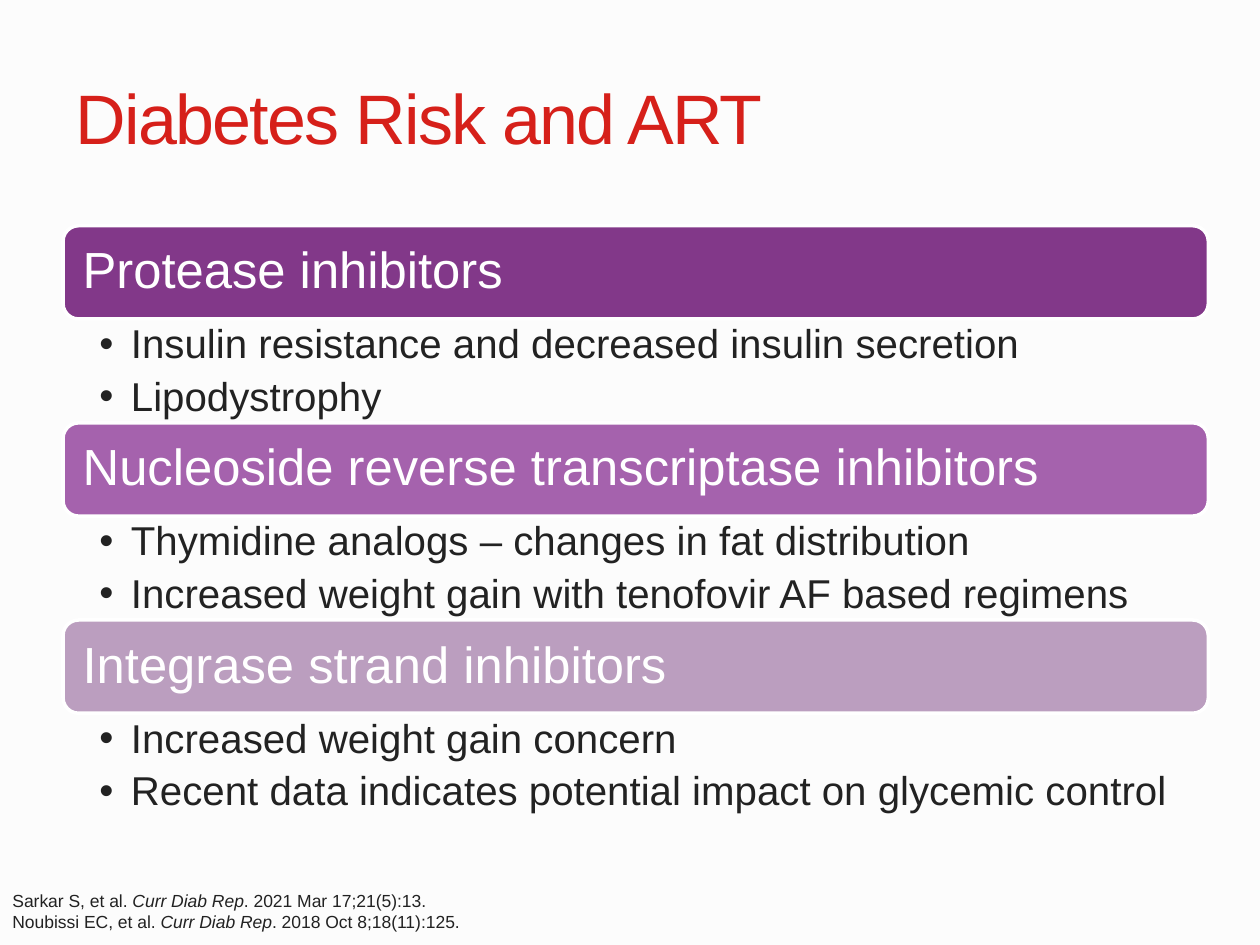
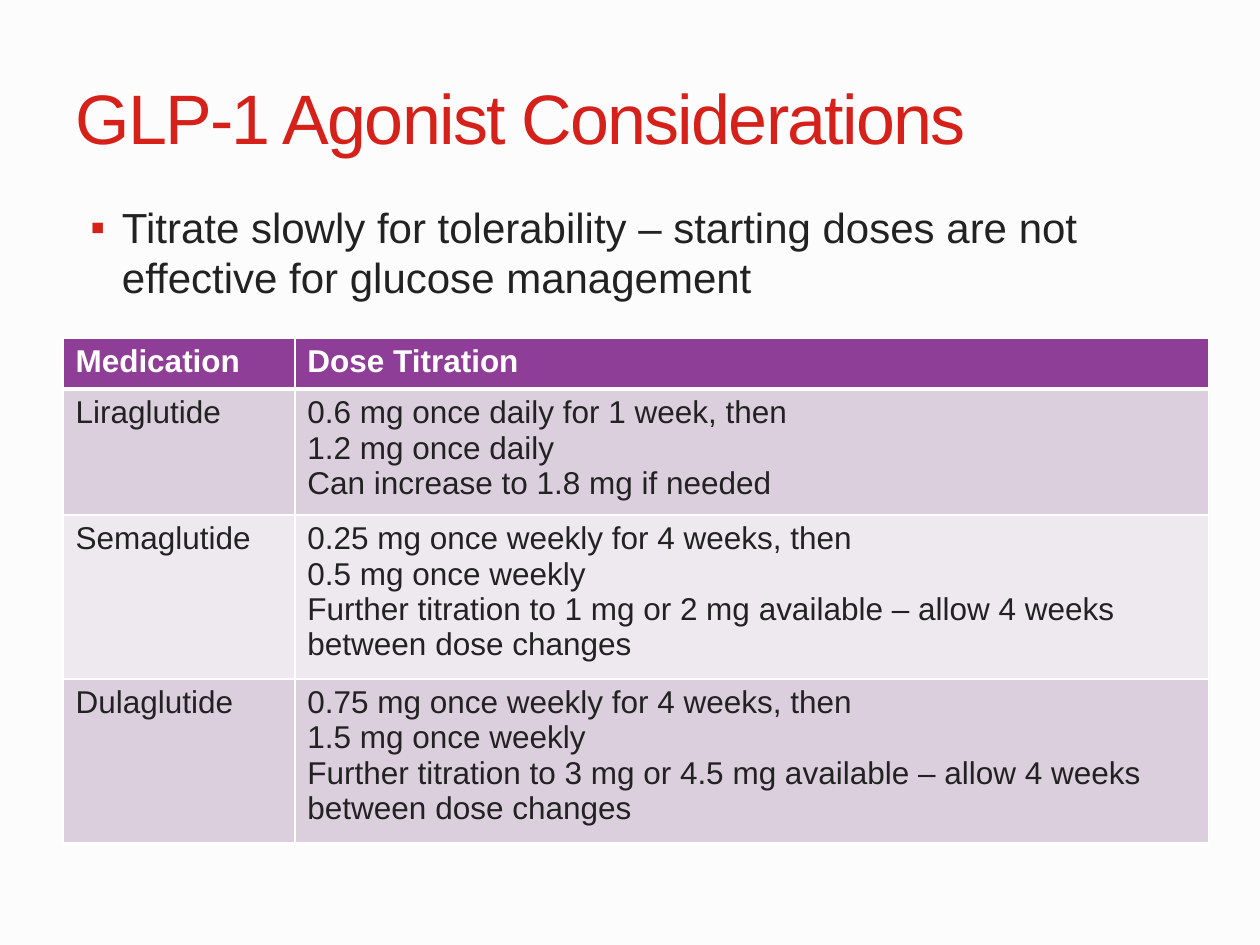
import lxml.etree
import pptx
import pptx.dml.color
import pptx.enum.shapes
import pptx.enum.text
import pptx.oxml.ns
import pptx.util

Pt = pptx.util.Pt
RGBColor = pptx.dml.color.RGBColor
Anchor = pptx.enum.text.MSO_ANCHOR
Align = pptx.enum.text.PP_ALIGN
qn = pptx.oxml.ns.qn

RED = RGBColor(0xD6, 0x20, 0x1A)
INK = RGBColor(0x22, 0x22, 0x22)
WHITE = RGBColor(0xFF, 0xFF, 0xFF)
PAPER = RGBColor(0xFC, 0xFC, 0xFC)
BAND_FILLS = (
    RGBColor(0x82, 0x38, 0x89),
    RGBColor(0xA5, 0x62, 0xAD),
    RGBColor(0xBB, 0x9E, 0xBF),
)
HEADER_FILL = RGBColor(0x8F, 0x3E, 0x97)
ROW_FILLS = (RGBColor(0xDB, 0xCE, 0xDD), RGBColor(0xEE, 0xE8, 0xEF))

FONT = "Arial"
LEFT, WIDTH = 36, 654.5
BAND_TOP, BAND_HEIGHT, BAND_PITCH = 129, 53.3, 112.65

DRUG_CLASSES = [
    ("Protease inhibitors",
     ["Insulin resistance and decreased insulin secretion", "Lipodystrophy"]),
    ("Nucleoside reverse transcriptase inhibitors",
     ["Thymidine analogs – changes in fat distribution",
      "Increased weight gain with tenofovir AF based regimens"]),
    ("Integrase strand inhibitors",
     ["Increased weight gain concern",
      "Recent data indicates potential impact on glycemic control"]),
]
# Each reference is a list of (text, italic) spans.
REFERENCES = [
    [("Sarkar S, et al. ", False), ("Curr Diab Rep", True),
     (". 2021 Mar 17;21(5):13.", False)],
    [("Noubissi EC, et al. ", False), ("Curr Diab Rep", True),
     (". 2018 Oct 8;18(11):125.", False)],
]
DOSES = [
    ("Medication", ["Dose Titration"]),
    ("Liraglutide",
     ["0.6 mg once daily for 1 week, then",
      "1.2 mg once daily",
      "Can increase to 1.8 mg if needed"]),
    ("Semaglutide",
     ["0.25 mg once weekly for 4 weeks, then",
      "0.5 mg once weekly",
      "Further titration to 1 mg or 2 mg available – allow 4 weeks between dose changes"]),
    ("Dulaglutide",
     ["0.75 mg once weekly for 4 weeks, then",
      "1.5 mg once weekly",
      "Further titration to 3 mg or 4.5 mg available – allow 4 weeks between dose changes"]),
]


def add_bullet(para, char, color, margin, hanging):
    properties = para._p.get_or_add_pPr()
    properties.set("marL", str(Pt(margin)))
    properties.set("indent", str(-Pt(hanging)))
    bullet_color = lxml.etree.SubElement(properties, qn("a:buClr"))
    lxml.etree.SubElement(bullet_color, qn("a:srgbClr")).set("val", str(color))
    lxml.etree.SubElement(properties, qn("a:buFont")).set("typeface", FONT)
    lxml.etree.SubElement(properties, qn("a:buChar")).set("char", char)


def write(frame, paragraphs, size, color=INK, bold=False, spacing=None,
          after=None, tracking=None, bullet=None):
    """Fill a frame with paragraphs, each a string or a list of (text, italic)."""
    for index, content in enumerate(paragraphs):
        para = frame.paragraphs[0] if index == 0 else frame.add_paragraph()
        para.alignment = Align.LEFT
        if bullet:
            add_bullet(para, *bullet)
        if spacing:
            para.line_spacing = spacing
        if after:
            para.space_after = Pt(after)
        spans = [(content, False)] if isinstance(content, str) else content
        for text, italic in spans:
            span = para.add_run()
            span.text = text
            span.font.name = FONT
            span.font.size = Pt(size)
            span.font.bold = bold
            span.font.italic = italic
            span.font.color.rgb = color
            if tracking:
                span._r.get_or_add_rPr().set("spc", str(round(tracking * 100)))


def set_insets(frame, left, top, right, bottom):
    frame.margin_left, frame.margin_top = Pt(left), Pt(top)
    frame.margin_right, frame.margin_bottom = Pt(right), Pt(bottom)


def set_borders(cell, top, bottom):
    """Give a cell white borders; left and right are one point wide."""
    properties = cell._tc.get_or_add_tcPr()
    for side, width in (("L", 1), ("R", 1), ("T", top), ("B", bottom)):
        line = lxml.etree.SubElement(properties, qn(f"a:ln{side}"))
        line.set("w", str(Pt(width)))
        fill = lxml.etree.SubElement(line, qn("a:solidFill"))
        lxml.etree.SubElement(fill, qn("a:srgbClr")).set("val", str(WHITE))


class Deck:
    def __init__(self):
        self.show = pptx.Presentation()
        self.show.slide_width, self.show.slide_height = Pt(720), Pt(540)
        self.page = None

    def add_page(self, title):
        self.page = self.show.slides.add_slide(self.show.slide_layouts[5])
        self.page.background.fill.solid()
        self.page.background.fill.fore_color.rgb = PAPER
        box = self.page.shapes.title
        box.left, box.top, box.width, box.height = Pt(LEFT), Pt(21.6), Pt(WIDTH), Pt(90)
        frame = box.text_frame
        frame.vertical_anchor = Anchor.MIDDLE
        frame.auto_size = pptx.enum.text.MSO_AUTO_SIZE.NONE
        set_insets(frame, 7.2, 3.6, 7.2, 3.6)
        write(frame, [title], size=40, color=RED, tracking=-1)

    def text(self, left, top, width, height, paragraphs,
             insets=(7.2, 3.6, 7.2, 3.6), **style):
        box = self.page.shapes.add_textbox(Pt(left), Pt(top), Pt(width), Pt(height))
        box.text_frame.word_wrap = True
        set_insets(box.text_frame, *insets)
        write(box.text_frame, paragraphs, **style)

    def band(self, top, heading, fill):
        band = self.page.shapes.add_shape(
            pptx.enum.shapes.MSO_SHAPE.ROUNDED_RECTANGLE,
            Pt(LEFT), Pt(top), Pt(WIDTH), Pt(BAND_HEIGHT))
        band.shadow.inherit = False
        band.fill.solid()
        band.fill.fore_color.rgb = fill
        band.line.color.rgb = WHITE
        band.line.width = Pt(2)
        frame = band.text_frame
        frame.word_wrap = True
        frame.vertical_anchor = Anchor.MIDDLE
        set_insets(frame, 8.64, 8.64, 8.64, 8.64)
        write(frame, [heading], size=29, color=WHITE, spacing=0.9)

    def table(self, top, rows, widths, heights):
        table = self.page.shapes.add_table(
            len(rows), len(widths), Pt(LEFT), Pt(top),
            Pt(sum(widths)), Pt(sum(heights))).table
        table.horz_banding = False
        for column, width in zip(table.columns, widths):
            column.width = Pt(width)
        for index, (name, lines) in enumerate(rows):
            table.rows[index].height = Pt(heights[index])
            header = index == 0
            for cell, paragraphs in zip(table.rows[index].cells, ([name], lines)):
                set_borders(cell, top=3 if index == 1 else 1, bottom=3 if header else 1)
                cell.fill.solid()
                cell.fill.fore_color.rgb = HEADER_FILL if header else ROW_FILLS[(index - 1) % 2]
                write(cell.text_frame, paragraphs, size=18,
                      color=WHITE if header else INK, bold=header)


def main():
    deck = Deck()

    deck.add_page("Diabetes Risk and ART")
    for index, (heading, effects) in enumerate(DRUG_CLASSES):
        top = BAND_TOP + index * BAND_PITCH
        deck.band(top, heading, BAND_FILLS[index])
        deck.text(LEFT, top + BAND_HEIGHT, WIDTH, BAND_PITCH - BAND_HEIGHT, effects,
                  insets=(20.8, 2.9, 16.6, 2.9), size=23, spacing=0.9, after=5.2,
                  bullet=("•", INK, 18, 18))
    deck.text(0, 505, 348, 31.5, REFERENCES, size=10)

    deck.add_page("GLP-1 Agonist Considerations")
    deck.text(LEFT, 111.6, WIDTH, 72,
              ["Titrate slowly for tolerability – starting doses are not "
               "effective for glucose management"],
              size=24, bullet=("▪", RED, 26.6, 18))
    deck.table(193, DOSES, widths=(132.5, 522), heights=(29.2, 67.5, 88, 88))

    deck.show.save("out.pptx")


if __name__ == "__main__":
    main()
